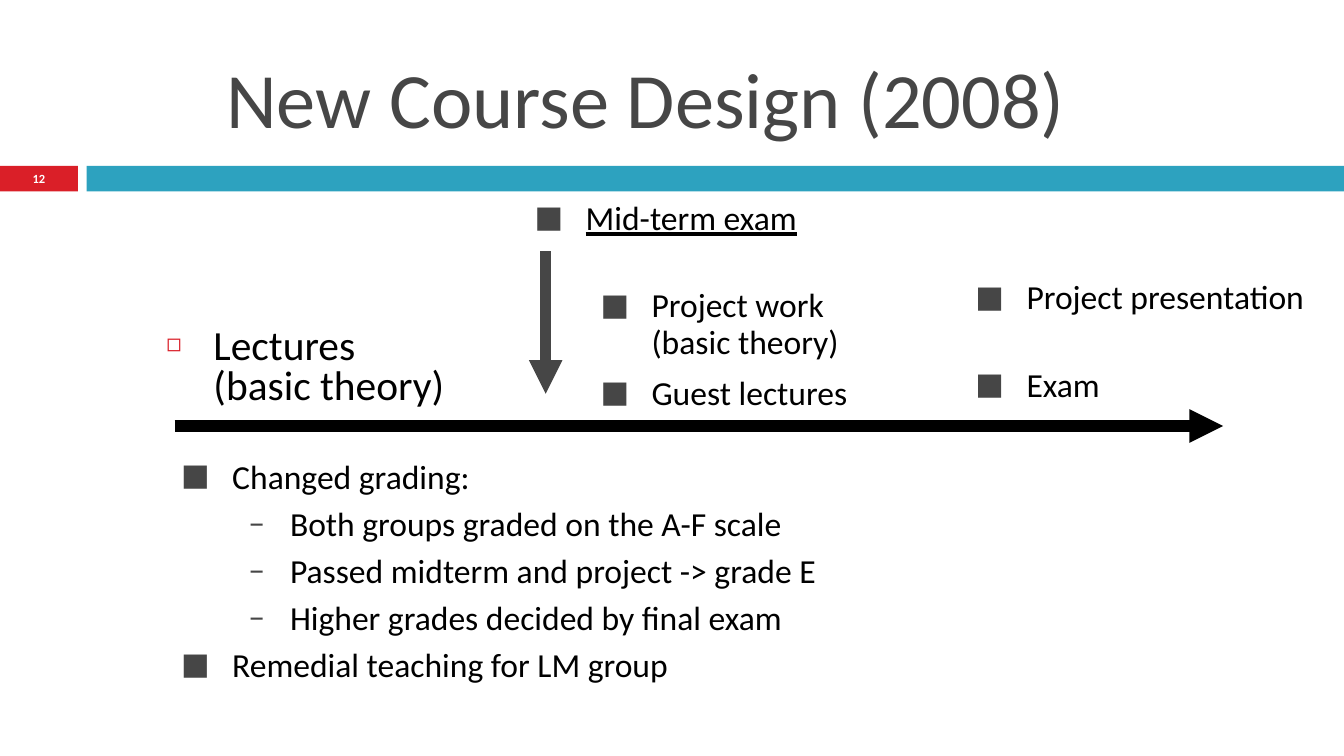
from lxml.etree import SubElement
from pptx import Presentation
from pptx.dml.color import RGBColor
from pptx.enum.shapes import MSO_CONNECTOR, MSO_SHAPE
from pptx.enum.text import MSO_ANCHOR, PP_ALIGN
from pptx.oxml.ns import qn
from pptx.util import Inches, Pt

GRAY, RED, TEAL, BLACK, WHITE = "464646", "DA1F28", "2DA2BF", "000000", "FFFFFF"
SQUARE = dict(char="■", color=GRAY, size=90, left=0.38, hang=0.38)
HOLLOW = dict(char="◻", color=RED, size=60, left=0.35, hang=0.35)
DASH = dict(char="–", color=GRAY, size=100, left=0.81, hang=0.31)
ITEM = dict(space_before=Pt(3.6), line_spacing=0.9)
LIST = dict(space_before=Pt(3.6))


def rgb(value):
    return RGBColor.from_string(value)


def apply(target, values):
    for name, value in values.items():
        setattr(target, name, value)


class Deck:
    """Builds one slide on a grid of tenths of an inch."""

    def __init__(self, cols, rows):
        self.prs = Presentation()
        self.prs.slide_width, self.prs.slide_height = self.grid(cols, rows)
        self.s = self.prs.slides.add_slide(self.prs.slide_layouts[6])
        self.font = dict(name="Calibri", size=Pt(18), bold=False)

    def grid(self, *cells):
        return [Inches(cell / 10) for cell in cells]

    def bar(self, box, color):
        sp = self.s.shapes.add_shape(MSO_SHAPE.RECTANGLE, *self.grid(*box))
        sp.shadow.inherit = False
        sp.fill.solid()
        sp.fill.fore_color.rgb = rgb(color)
        sp.line.fill.background()

    def arrow(self, ends, color):
        sp = self.s.shapes.add_connector(MSO_CONNECTOR.STRAIGHT, *self.grid(*ends))
        sp.line.width = Pt(6)
        sp.line.color.rgb = rgb(color)
        SubElement(sp.line._get_or_add_ln(), qn("a:tailEnd"), type="triangle")
        SubElement(sp._element.spPr, qn("a:effectLst"))

    def bullet(self, p, char, color, size, left, hang):
        pPr = p._p.get_or_add_pPr()
        pPr.set("marL", str(Inches(left)))
        pPr.set("indent", str(-Inches(hang)))
        SubElement(SubElement(pPr, qn("a:buClr")), qn("a:srgbClr"), val=color)
        SubElement(pPr, qn("a:buSzPct"), val=str(size * 1000))
        SubElement(pPr, qn("a:buFont"), typeface=self.font["name"])
        SubElement(pPr, qn("a:buChar"), char=char)

    def text(self, box, lines, color=BLACK, frame=None, para=None, font=None):
        tf = self.s.shapes.add_textbox(*self.grid(*box)).text_frame
        apply(tf, {"word_wrap": True, **(frame or {})})
        for i, (words, mark) in enumerate(lines):
            p = tf.add_paragraph() if i else tf.paragraphs[0]
            p.text = words
            apply(p, para or {})
            if mark:
                p.level = int(mark is DASH)
                self.bullet(p, **mark)
            for r in p.runs:
                apply(r.font, {**self.font, **(font or {})})
                r.font.color.rgb = rgb(color)


def main():
    d = Deck(100, 56.25)
    d.bar((0, 12.35, 5.8, 1.9), RED)
    d.bar((6.45, 12.35, 93.55, 1.9), TEAL)
    d.text((0, 12.3, 5.8, 2), [("12", None)], WHITE,
           dict(vertical_anchor=MSO_ANCHOR.MIDDLE, margin_top=0, margin_bottom=0),
           dict(alignment=PP_ALIGN.CENTER), dict(size=Pt(6.7), bold=True))
    d.text((15.85, 2.15, 81.65, 9.1), [("New Course Design (2008)", None)], GRAY,
           dict(vertical_anchor=MSO_ANCHOR.BOTTOM), font=dict(size=Pt(42)))
    d.text((11.4, 24, 28.4, 6.9), [("Lectures\n(basic theory)", HOLLOW)],
           para=dict(space_before=Pt(7), line_spacing=0.8), font=dict(size=Pt(22.2)))

    d.arrow((13, 31.7, 91, 31.7), BLACK)
    d.arrow((40.6, 18.7, 40.6, 29.3), GRAY)
    for col, row, words in [(43.7, 27.5, "Guest lectures"),
                            (43.7, 21, "Project work\n(basic theory)"),
                            (71.6, 20.4, "Project presentation"),
                            (71.6, 26.9, "Exam"),
                            (38.8, 14.5, "Mid-term exam")]:
        d.text((col, row, 28.4, 6.9), [(words, SQUARE)], para=ITEM,
               font=dict(underline=words == "Mid-term exam"))

    d.text((12.5, 33.4, 85, 17.2), [("Changed grading:", SQUARE),
                                    ("Both groups graded on the A-F scale", DASH),
                                    ("Passed midterm and project -> grade E", DASH),
                                    ("Higher grades decided by final exam", DASH),
                                    ("Remedial teaching for LM group", SQUARE)], para=LIST)
    d.prs.save("out.pptx")


if __name__ == "__main__":
    main()
